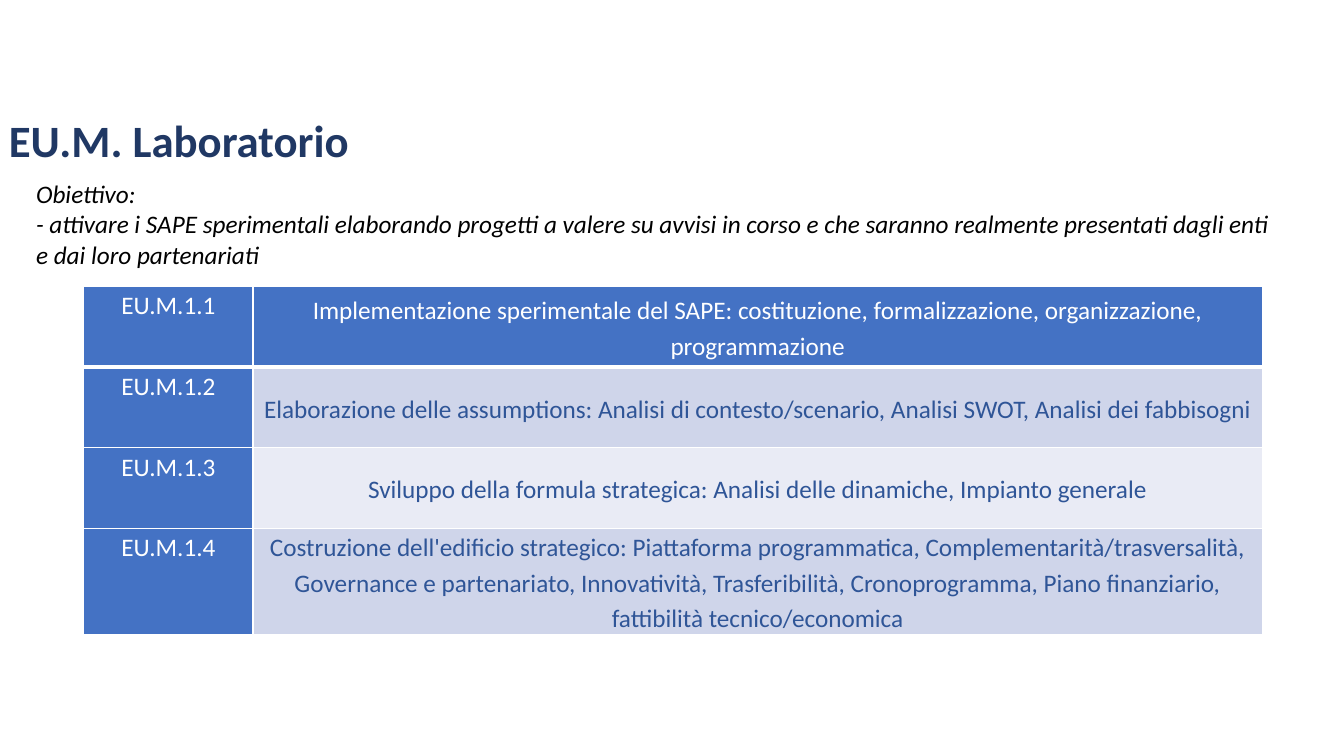
from lxml.etree import SubElement
from pptx import Presentation
from pptx.dml.color import RGBColor
from pptx.enum.text import MSO_ANCHOR, PP_ALIGN
from pptx.oxml.ns import qn
from pptx.util import Inches, Pt

WIDTH, HEIGHT = 13.33, 7.5
COLORS = {
    "white": "FFFFFF", "black": "000000", "navy": "203864", "text": "2F5597",
    "header": "4472C4", "band_dark": "CFD5EA", "band_light": "E9EBF5",
}
COLUMNS = [1.68, 10.01]
ROW_HEIGHT = 0.8
ROWS = [
    ("EU.M.1.1", "Implementazione sperimentale del SAPE: costituzione, formalizzazione, "
     "organizzazione, programmazione"),
    ("EU.M.1.2", "Elaborazione delle assumptions: Analisi di contesto/scenario, "
     "Analisi SWOT, Analisi dei fabbisogni"),
    ("EU.M.1.3", "Sviluppo della formula strategica: Analisi delle dinamiche, "
     "Impianto generale"),
    ("EU.M.1.4", "Costruzione dell'edificio strategico: Piattaforma programmatica, "
     "Complementarità/trasversalità, Governance e partenariato, Innovatività, "
     "Trasferibilità, Cronoprogramma, Piano finanziario, fattibilità tecnico/economica"),
]
GOAL = [
    "Obiettivo:",
    "- attivare i SAPE sperimentali elaborando progetti a valere su avvisi in corso "
    "e che saranno realmente presentati dagli enti e dai loro partenariati",
]


def rgb(name):
    return RGBColor.from_string(COLORS[name])


def set_attrs(target, values):
    for name, value in values.items():
        setattr(target, name, value)


def add_run(p, text, color, **font):
    r = p.add_run()
    r.text = text
    set_attrs(r.font, {"name": "Calibri", "size": Pt(18), "bold": False, **font})
    r.font.color.rgb = rgb(color)


def add_text(slide, box, lines, color, anchor, spacing, **font):
    left, top, width, height = box
    sp = slide.shapes.add_textbox(
        Inches(left * WIDTH), Inches(top * HEIGHT),
        Inches(width * WIDTH), Inches(height * HEIGHT))
    tf = sp.text_frame
    set_attrs(tf, {"word_wrap": True, "vertical_anchor": anchor})
    for i, line in enumerate(lines):
        p = tf.add_paragraph() if i else tf.paragraphs[0]
        p.line_spacing = spacing
        add_run(p, line, color, **font)


def set_borders(cell, widths):
    tcPr = cell._tc.get_or_add_tcPr()
    for side, width in widths.items():
        ln = SubElement(tcPr, qn(f"a:ln{side}"), w=str(Pt(width)))
        fill = SubElement(ln, qn("a:solidFill"))
        SubElement(fill, qn("a:srgbClr"), val=COLORS["white"])


def format_cell(cell, text, row, col):
    header = row == 0 or col == 0
    set_attrs(cell, {
        "margin_left": Inches(0.07), "margin_right": Inches(0.07),
        "margin_top": 0, "margin_bottom": 0,
        "vertical_anchor": MSO_ANCHOR.MIDDLE if col else MSO_ANCHOR.TOP,
    })
    set_borders(cell, {"L": 1, "R": 1, "T": 3 if row == 1 else 1,
                       "B": 3 if row == 0 else 1})
    cell.fill.solid()
    band = "band_dark" if row % 2 else "band_light"
    cell.fill.fore_color.rgb = rgb("header" if header else band)
    p = cell.text_frame.paragraphs[0]
    set_attrs(p, {"alignment": PP_ALIGN.CENTER, "line_spacing": 1.15})
    add_run(p, text, "white" if header else "text")


def add_modules(slide, left, top):
    table = slide.shapes.add_table(
        len(ROWS), len(COLUMNS), Inches(left * WIDTH), Inches(top * HEIGHT),
        Inches(sum(COLUMNS)), Inches(ROW_HEIGHT * len(ROWS))).table
    table.first_col = True
    for column, width in zip(table.columns, COLUMNS):
        column.width = Inches(width)
    for i, texts in enumerate(ROWS):
        table.rows[i].height = Inches(ROW_HEIGHT)
        for j, text in enumerate(texts):
            format_cell(table.cell(i, j), text, i, j)


def main():
    prs = Presentation()
    set_attrs(prs, {"slide_width": Inches(WIDTH), "slide_height": Inches(HEIGHT)})
    s = prs.slides.add_slide(prs.slide_layouts[6])
    add_modules(s, 0.83 / WIDTH, 2.84 / HEIGHT)
    add_text(s, (0.26 / WIDTH, 1.72 / HEIGHT, 12.6 / WIDTH, 1.01 / HEIGHT),
             GOAL, "black", MSO_ANCHOR.TOP, 1.0, italic=True)
    add_text(s, (-0.01 / WIDTH, 0.99 / HEIGHT, 11.5 / WIDTH, 0.86 / HEIGHT),
             ["EU.M. Laboratorio"], "navy", MSO_ANCHOR.MIDDLE, 0.9,
             size=Pt(32), bold=True)
    prs.save("out.pptx")


if __name__ == "__main__":
    main()
